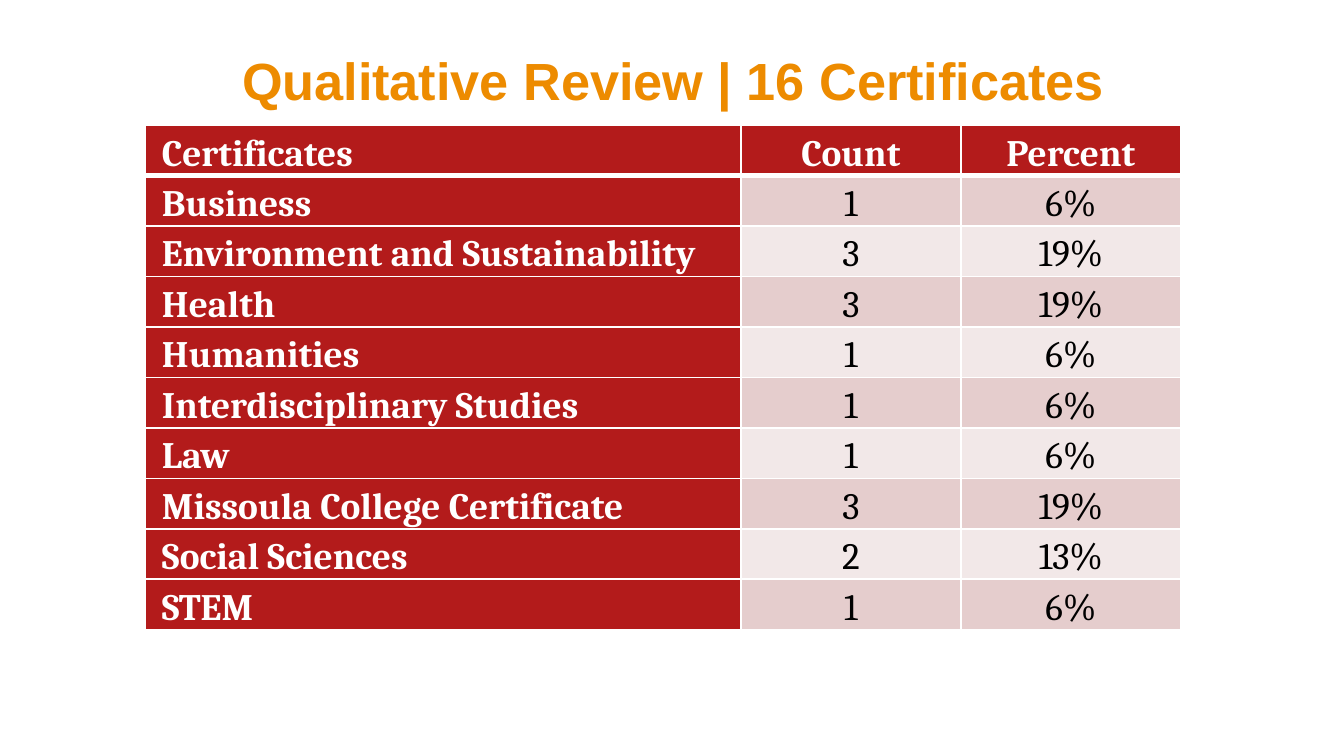
"""Build the slide that tables the qualitative review of 16 certificates."""
from lxml import etree
from pptx import Presentation
from pptx.dml.color import RGBColor
from pptx.enum.text import MSO_ANCHOR, PP_ALIGN
from pptx.oxml.ns import qn
from pptx.util import Emu, Pt

LEFT, CENTER = PP_ALIGN.LEFT, PP_ALIGN.CENTER
MIDDLE, BOTTOM = MSO_ANCHOR.MIDDLE, MSO_ANCHOR.BOTTOM
PX = 914400 / 134.4

THEME = {
    "title": "ED8B00", "red": "B31B1B", "white": "FFFFFF", "black": "000000",
    "bands": ["E5CDCD", "F2E8E8"],
    "title_font": "Arial", "table_font": "Cambria",
    "title_size": 28, "table_size": 20,
    "rule": 1, "header_rule": 3,
}

ROWS = [
    ("Certificates", "Count", "Percent"),
    ("Business", "1", "6%"),
    ("Environment and Sustainability", "3", "19%"),
    ("Health", "3", "19%"),
    ("Humanities", "1", "6%"),
    ("Interdisciplinary Studies", "1", "6%"),
    ("Law", "1", "6%"),
    ("Missoula College Certificate", "3", "19%"),
    ("Social Sciences", "2", "13%"),
    ("STEM", "1", "6%"),
]
COLUMN_WIDTHS = [596, 220, 220]
TABLE_HEIGHT = 505


def px(length):
    return Emu(round(length * PX))


def write(frame, text, *, font, size, color, bold=False, align=LEFT):
    para = frame.paragraphs[0]
    para.alignment = align
    span = para.add_run()
    span.text = text
    span.font.name = font
    span.font.size = Pt(size)
    span.font.bold = bold
    span.font.color.rgb = RGBColor.from_string(color)


deck = Presentation()
deck.slide_width, deck.slide_height = px(1344), px(756)
page = deck.slides.add_slide(deck.slide_layouts[6])

box = page.shapes.add_textbox(px(23), px(42), px(1300), px(75))
box.text_frame.word_wrap = True
box.text_frame.vertical_anchor = MIDDLE
write(box.text_frame, "Qualitative Review | 16 Certificates", font=THEME["title_font"],
      size=THEME["title_size"], color=THEME["title"], bold=True, align=CENTER)

table = page.shapes.add_table(len(ROWS), len(COLUMN_WIDTHS), px(145), px(125),
                              px(sum(COLUMN_WIDTHS)), px(TABLE_HEIGHT)).table
for column, width in zip(table.columns, COLUMN_WIDTHS):
    column.width = px(width)

for row_index, row in enumerate(ROWS):
    for column_index, text in enumerate(row):
        cell = table.cell(row_index, column_index)
        heading = row_index == 0 or column_index == 0
        cell.margin_left = cell.margin_right = px(17)
        cell.margin_top = cell.margin_bottom = 0
        cell.vertical_anchor = BOTTOM

        widths = dict.fromkeys(("a:lnL", "a:lnR", "a:lnT", "a:lnB"), THEME["rule"])
        if row_index == 0:
            widths["a:lnB"] = THEME["header_rule"]
        elif row_index == 1:
            widths["a:lnT"] = THEME["header_rule"]
        properties = cell._tc.get_or_add_tcPr()
        for side, width in widths.items():
            line = etree.SubElement(properties, qn(side), w=str(Pt(width)))
            paint = etree.SubElement(line, qn("a:solidFill"))
            etree.SubElement(paint, qn("a:srgbClr"), val=THEME["white"])

        fill = THEME["red"] if heading else THEME["bands"][(row_index - 1) % 2]
        cell.fill.solid()
        cell.fill.fore_color.rgb = RGBColor.from_string(fill)
        write(cell.text_frame, text, font=THEME["table_font"], size=THEME["table_size"],
              color=THEME["white" if heading else "black"], bold=heading,
              align=CENTER if column_index else LEFT)

deck.save("out.pptx")
